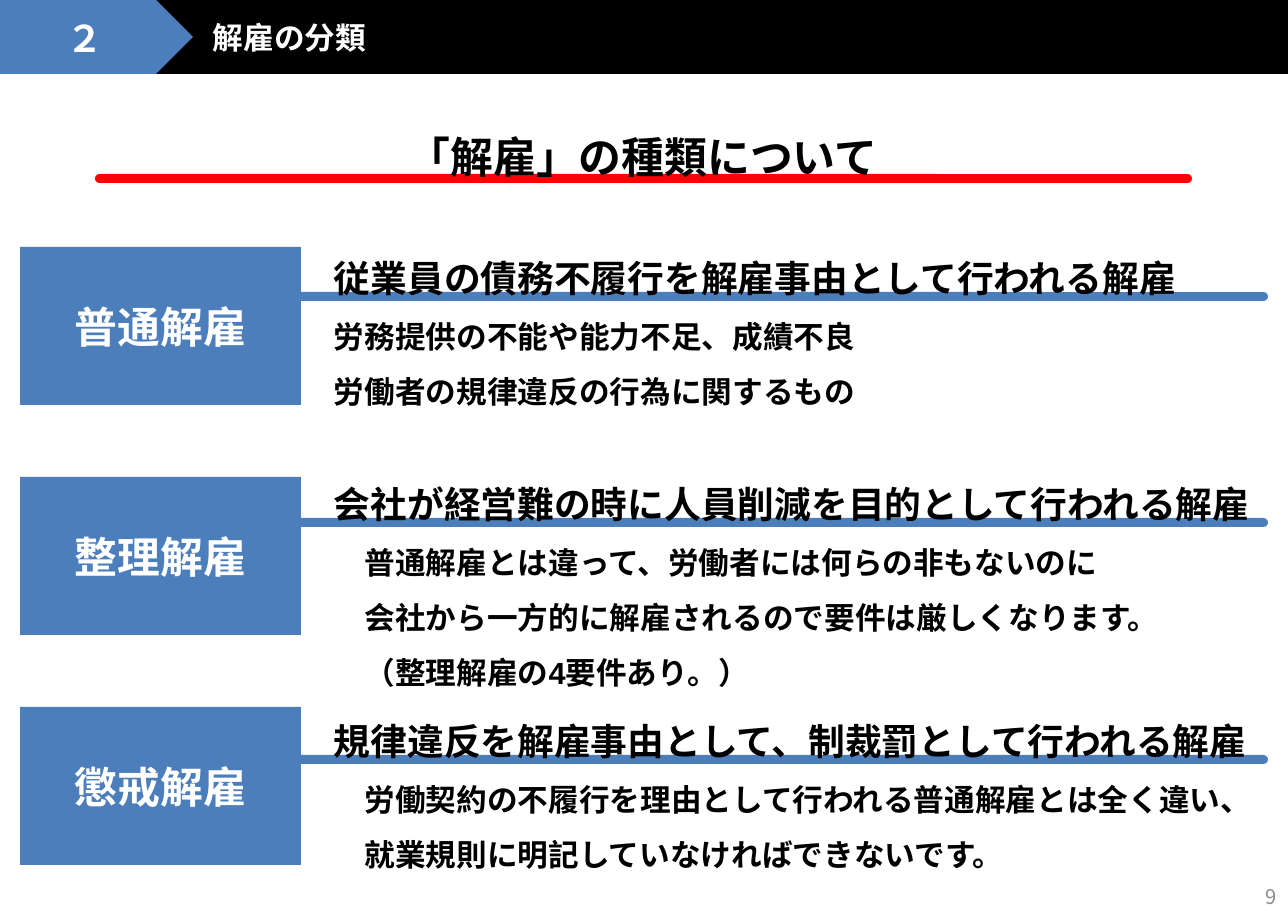
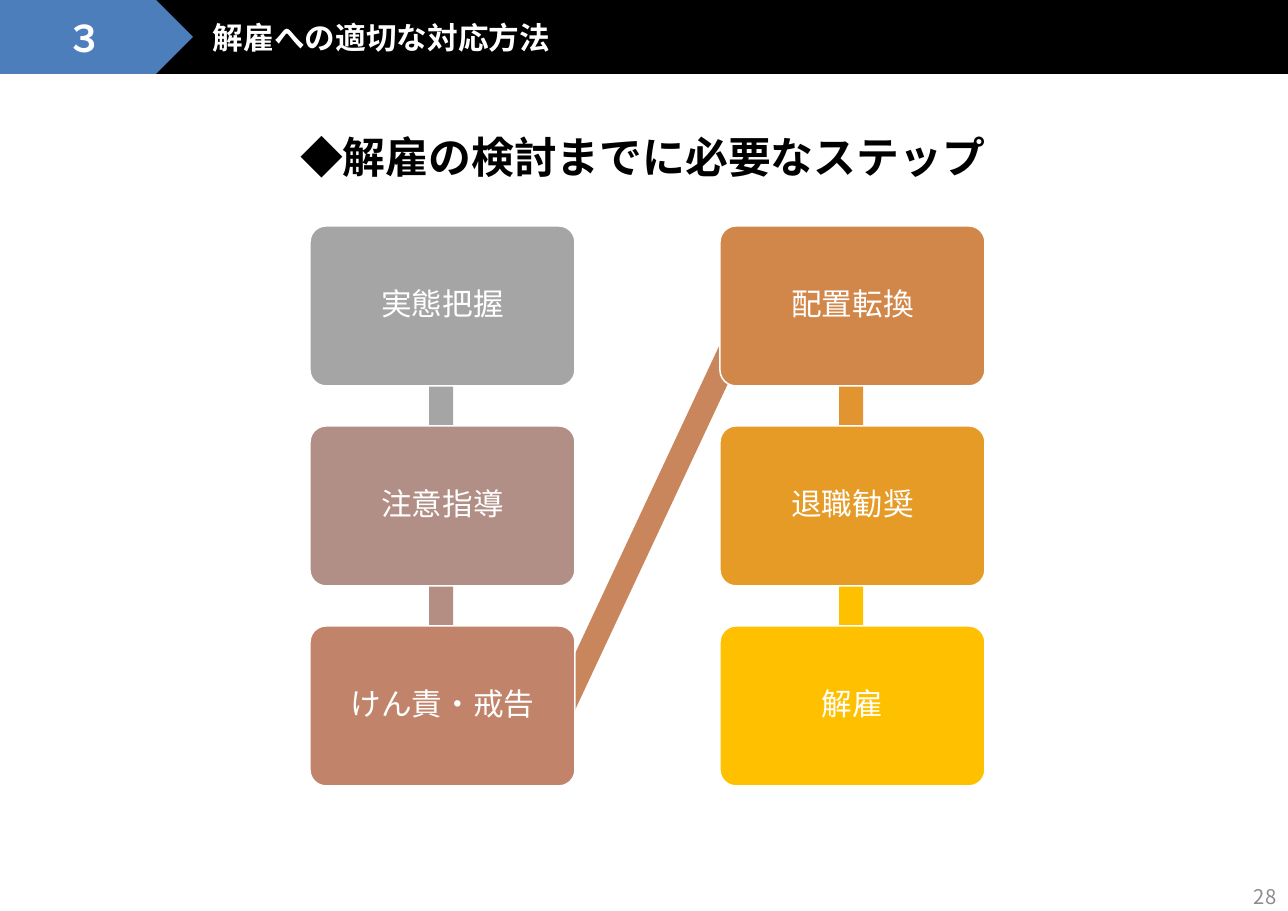
import math
import lxml.etree
import pptx
import pptx.dml.color
import pptx.enum.shapes
import pptx.enum.text
import pptx.oxml.ns
import pptx.util

SCALE = 8298
WIDTH, HEIGHT = 1288, 911
ACCENT, BLACK, WHITE, RED, GREY = "4D7EBC", "000000", "FFFFFF", "FF0000", "8C8C8C"
CJK_FONT = "Noto Sans CJK JP"

SHAPES = pptx.enum.shapes.MSO_SHAPE
ANCHOR = pptx.enum.text.MSO_ANCHOR
ALIGN = pptx.enum.text.PP_ALIGN
CENTER = {"alignment": ALIGN.CENTER}
SPACED = {"line_spacing": 1.5}

STYLES = {
    "number": ({"size": 24, "bold": True, "name": "Arial"}, WHITE, CENTER),
    "section": ({"size": 20, "bold": True, "name": "Arial"}, WHITE, {}),
    "title": ({"size": 28, "bold": True, "name": "Arial"}, BLACK, {**CENTER, **SPACED}),
    "label": ({"size": 28, "bold": True, "name": "Arial"}, WHITE, CENTER),
    "lead": ({"size": 24, "bold": True, "name": "Arial"}, BLACK, SPACED),
    "detail": ({"size": 20, "bold": True, "name": "Arial"}, BLACK, SPACED),
    "step": ({"size": 20, "name": CJK_FONT}, WHITE, {**CENTER, "line_spacing": 0.9}),
    "page": ({"size": 13.2, "name": CJK_FONT}, GREY, {"alignment": ALIGN.RIGHT}),
}

DISMISSALS = [
    ("普通解雇", 19, [
        "従業員の債務不履行を解雇事由として行われる解雇",
        "労務提供の不能や能力不足、成績不良",
        "労働者の規律違反の行為に関するもの",
    ]),
    ("整理解雇", 23, [
        "会社が経営難の時に人員削減を目的として行われる解雇",
        "　普通解雇とは違って、労働者には何らの非もないのに",
        "　会社から一方的に解雇されるので要件は厳しくなります。",
        "　（整理解雇の4要件あり。）",
    ]),
    ("懲戒解雇", 16, [
        "規律違反を解雇事由として、制裁罰として行われる解雇",
        "　労働契約の不履行を理由として行われる普通解雇とは全く違い、",
        "　就業規則に明記していなければできないです。",
    ]),
]

STEPS = [
    ("実態把握", "A5A5A5", "A5A5A5"),
    ("注意指導", "B18F87", "B48D83"),
    ("けん責・戒告", "C1846B", "C9865C"),
    ("配置転換", "D2874A", "E19430"),
    ("退職勧奨", "E59B26", "FFC000"),
    ("解雇", "FFC000", None),
]


def px(length):
    """Turn px into EMU."""
    return pptx.util.Emu(round(length * SCALE))


def color(value):
    """Turn a hex string into a colour."""
    return pptx.dml.color.RGBColor.from_string(value)


def write(frame, lines, anchor=ANCHOR.MIDDLE):
    """Fill a text frame with one paragraph for each (text, style) pair."""
    frame.word_wrap = True
    frame.vertical_anchor = anchor
    for index, (text, style) in enumerate(lines):
        font_format, ink, paragraph_format = STYLES[style]
        paragraph = frame.add_paragraph() if index else frame.paragraphs[0]
        for key, value in paragraph_format.items():
            setattr(paragraph, key, value)
        run = paragraph.add_run()
        run.text = text
        for key, value in {**font_format, "size": pptx.util.Pt(font_format["size"])}.items():
            setattr(run.font, key, value)
        run.font.color.rgb = color(ink)
        east_asian = lxml.etree.SubElement(run.font._element, pptx.oxml.ns.qn("a:ea"))
        east_asian.set("typeface", CJK_FONT)


def add_text(slide, box, lines, anchor=ANCHOR.MIDDLE):
    """Add a text box."""
    write(slide.shapes.add_textbox(*map(px, box)).text_frame, lines, anchor)


def add_block(slide, kind, box, fill, outline=None, rounding=None):
    """Add a filled preset shape without a shadow."""
    block = slide.shapes.add_shape(kind, *map(px, box))
    block.shadow.inherit = False
    block.fill.solid()
    block.fill.fore_color.rgb = color(fill)
    if outline:
        block.line.color.rgb = color(outline)
        block.line.width = pptx.util.Pt(1)
    else:
        block.line.fill.background()
    if rounding is not None:
        block.adjustments[0] = rounding
    return block


def add_underline(slide, left, top, fill):
    """Add a round-ended rule."""
    add_block(slide, SHAPES.ROUNDED_RECTANGLE, (left, top, 1097, 9), fill, rounding=0.5)


def add_bands(slide, layout):
    """Draw the header bands and hand them to the layout that all slides share."""
    bands = [
        add_block(slide, SHAPES.RECTANGLE, (143, 0, WIDTH - 143, 74), BLACK),
        add_block(slide, SHAPES.PENTAGON, (0, 0, 193, 74), ACCENT),
    ]
    for shape_id, band in enumerate(bands, 20):
        band.element.xpath(".//p:cNvPr")[0].set("id", str(shape_id))
        layout.shapes.element.append(band.element)


def add_frame(slide, number, section, title, page):
    """Add the chapter number, section name, title and page number."""
    add_text(slide, (0, 10, 170, 55), [(number, "number")])
    add_text(slide, (202, 13, 1038, 48), [(section, "section")])
    add_text(slide, (94, 104, 1097, 79), [(title, "title")])
    add_text(slide, (997, 881, 290, 30), [(page, "page")])


def add_dismissal(slide, left, top, name, lift, lines):
    """Add one kind of dismissal: rule, label and explanation."""
    text_top = top - lift
    add_underline(slide, left + 151, text_top + 64, ACCENT)
    label = add_block(slide, SHAPES.RECTANGLE, (left, top, 281, 158), ACCENT)
    write(label.text_frame, [(name, "label")])
    text_left = left + 303
    styled = [(line, "detail" if index else "lead") for index, line in enumerate(lines)]
    add_text(slide, (text_left, text_top, WIDTH - text_left, 220), styled, ANCHOR.TOP)


def add_link(slide, start, end, fill):
    """Add a bar turned to run from start to end."""
    across, down = end[0] - start[0], end[1] - start[1]
    length, thickness = math.hypot(across, down), 24
    left = (start[0] + end[0] - length) / 2
    top = (start[1] + end[1] - thickness) / 2
    link = add_block(slide, SHAPES.RECTANGLE, (left, top, length, thickness), fill)
    link.rotation = round(math.degrees(math.atan2(down, across)), 1) % 360


def add_steps(slide, left, top, rows=3):
    """Add the steps column by column, each with its link to the next."""
    places = [(left + index // rows * 410, top + index % rows * 200)
              for index in range(len(STEPS))]
    for index, (name, fill, link_fill) in enumerate(STEPS):
        x, y = places[index]
        if link_fill:
            next_x, next_y = places[index + 1]
            if next_x == x:
                add_link(slide, (x + 131, y + 41), (x + 131, y + 239), link_fill)
            else:
                add_link(slide, (x + 225, y + 141), (next_x + 57, next_y + 25), link_fill)
        card = add_block(slide, SHAPES.ROUNDED_RECTANGLE, (x, y, 265, 160), fill, WHITE, 0.1)
        write(card.text_frame, [(name, "step")])


def main():
    """Build and save the presentation."""
    deck = pptx.Presentation()
    deck.slide_width, deck.slide_height = px(WIDTH), px(HEIGHT)
    blank = deck.slide_layouts[6]

    kinds = deck.slides.add_slide(blank)
    add_bands(kinds, blank)
    add_underline(kinds, 95, 174, RED)
    add_frame(kinds, "２", "解雇の分類", "「解雇」の種類について", "9")
    for index, dismissal in enumerate(DISMISSALS):
        add_dismissal(kinds, 20, 247 + index * 230, *dismissal)

    process = deck.slides.add_slide(blank)
    add_steps(process, 310, 226)
    add_frame(process, "３", "解雇への適切な対応方法", "◆解雇の検討までに必要なステップ", "28")

    deck.save("out.pptx")


if __name__ == "__main__":
    main()
